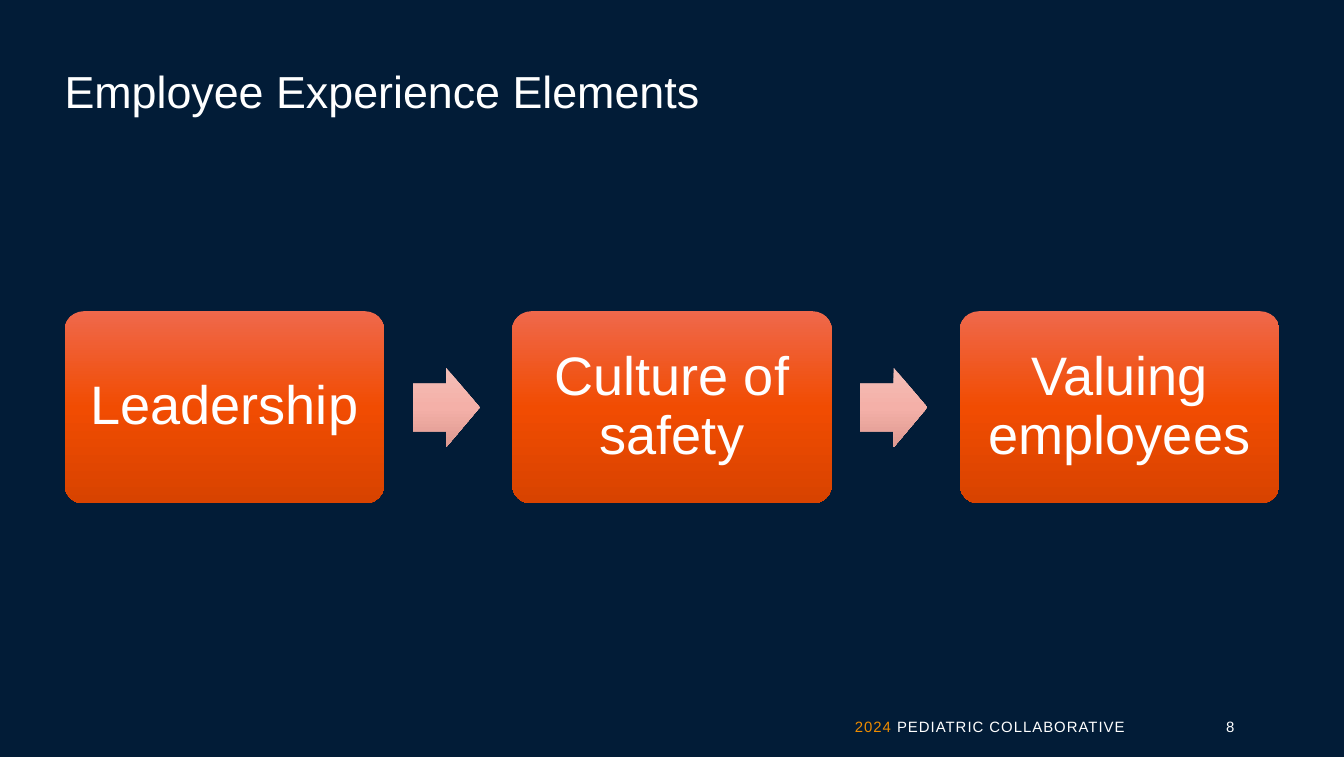
from copy import deepcopy
from dataclasses import dataclass

from pptx import Presentation
from pptx.dml.color import RGBColor
from pptx.enum import shapes, text
from pptx.oxml import ns
from pptx.util import Inches, Pt

NAVY = RGBColor(0x02, 0x1C, 0x37)
WHITE = RGBColor(0xFF, 0xFF, 0xFF)
AMBER = RGBColor(0xED, 0x8B, 0x00)
CARD_COLORS = (
    RGBColor(0xEF, 0x68, 0x4B),
    RGBColor(0xF1, 0x4C, 0x02),
    RGBColor(0xD8, 0x43, 0x00),
)
ARROW_COLORS = (
    RGBColor(0xF3, 0xBE, 0xB7),
    RGBColor(0xF4, 0xB0, 0xA8),
    RGBColor(0xDE, 0x99, 0x90),
)

FLOW_LEFT, FLOW_MIDDLE, FLOW_STEP = 0.48, 3.03, 3.33
ARROW_OFFSET = 2.59
ELEMENTS = ("Leadership", "Culture of safety", "Valuing employees")


@dataclass(frozen=True)
class FlowPart:
    preset: shapes.MSO_SHAPE
    width: float
    height: float
    adjustments: tuple
    colors: tuple


CARD = FlowPart(shapes.MSO_SHAPE.ROUNDED_RECTANGLE, 2.38, 1.43, (0.1,), CARD_COLORS)
ARROW = FlowPart(shapes.MSO_SHAPE.RIGHT_ARROW, 0.5, 0.59, (0.6, 0.5), ARROW_COLORS)


def write_text(shape, runs, *, size, align=text.PP_ALIGN.LEFT,
               anchor=text.MSO_ANCHOR.TOP, insets=(0.1, 0.05, 0.1, 0.05),
               line_spacing=1.0, tracking=0):
    frame = shape.text_frame
    frame.word_wrap = True
    frame.auto_size = text.MSO_AUTO_SIZE.NONE
    frame.vertical_anchor = anchor
    (frame.margin_left, frame.margin_top,
     frame.margin_right, frame.margin_bottom) = map(Inches, insets)
    paragraph = frame.paragraphs[0]
    paragraph.alignment = align
    paragraph.line_spacing = line_spacing
    for wording, color in runs:
        run = paragraph.add_run()
        run.text = wording
        run.font.name = "Arial"
        run.font.size = Pt(size)
        run.font.color.rgb = color
        if tracking:
            run.font._element.set("spc", str(round(tracking * 100)))


def fill_downward(shape, colors: tuple) -> None:
    shape.fill.gradient()
    shape.fill.gradient_angle = 270
    stop_list = shape._element.spPr.find(ns.qn("a:gradFill")).find(ns.qn("a:gsLst"))
    stop_list.append(deepcopy(stop_list[-1]))
    for index, (stop, color) in enumerate(zip(shape.fill.gradient_stops, colors)):
        stop.position = index / (len(colors) - 1)
        stop.color.rgb = color


def draw_part(slide, part: FlowPart, left: float):
    shape = slide.shapes.add_shape(
        part.preset, Inches(left), Inches(FLOW_MIDDLE - part.height / 2),
        Inches(part.width), Inches(part.height))
    shape.shadow.inherit = False
    shape.line.fill.background()
    for index, value in enumerate(part.adjustments):
        shape.adjustments[index] = value
    fill_downward(shape, part.colors)
    return shape


def draw_flow(slide, elements: tuple) -> None:
    for index, element in enumerate(elements):
        left = FLOW_LEFT + index * FLOW_STEP
        card = draw_part(slide, CARD, left)
        write_text(card, [(element, WHITE)], size=29, align=text.PP_ALIGN.CENTER,
                   anchor=text.MSO_ANCHOR.MIDDLE, insets=(0.1,) * 4, line_spacing=0.9)
        if index < len(elements) - 1:
            draw_part(slide, ARROW, left + ARROW_OFFSET)


def main() -> None:
    prs = Presentation()
    prs.slide_width, prs.slide_height = Inches(10), Inches(5.63)
    slide = prs.slides.add_slide(prs.slide_layouts[5])
    slide.background.fill.solid()
    slide.background.fill.fore_color.rgb = NAVY

    title = slide.shapes.title
    title.left, title.top = Inches(0.48), Inches(0.47)
    title.width, title.height = Inches(9.06), Inches(0.94)
    write_text(title, [("Employee Experience Elements", WHITE)], size=24,
               insets=(0, 0, 0, 0.1))

    draw_flow(slide, ELEMENTS)

    footer = slide.shapes.add_textbox(Inches(5.99), Inches(5.26), Inches(2.48), Inches(0.25))
    write_text(footer, [("2024", AMBER), (" PEDIATRIC COLLABORATIVE", WHITE)], size=8,
               align=text.PP_ALIGN.RIGHT, line_spacing=1.2, tracking=0.5)
    page_number = slide.shapes.add_textbox(
        Inches(8.94), Inches(5.26), Inches(0.43), Inches(0.26))
    write_text(page_number, [("8", WHITE)], size=8, align=text.PP_ALIGN.CENTER,
               insets=(0.1, 0.05, 0.1, 0), line_spacing=1.2)

    prs.save("out.pptx")


if __name__ == "__main__":
    main()
